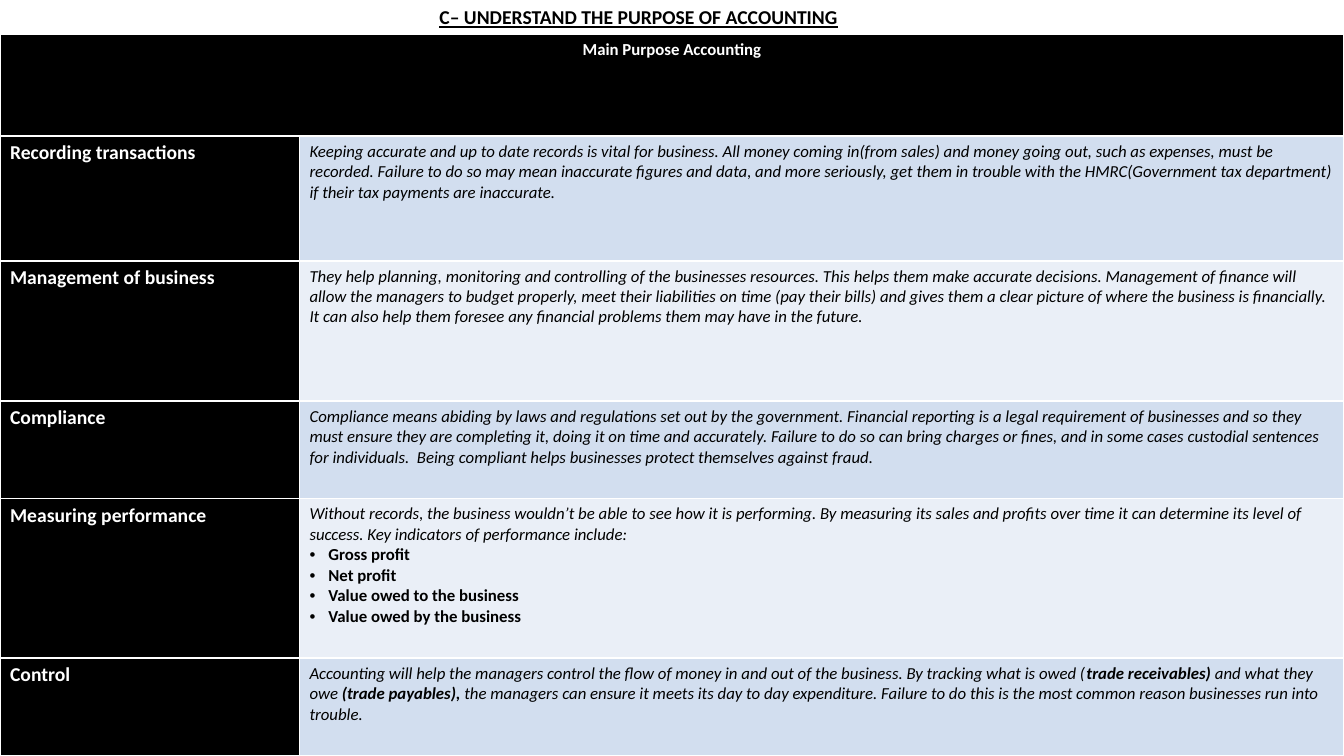
"""Builds a slide that explains the main purposes of accounting in a table."""
from lxml import etree
from pptx import Presentation
from pptx import util as u
from pptx.dml import color
from pptx.enum import text
from pptx.oxml import ns

COLOURS = {"black": "000000", "white": "FFFFFF", "band": "D2DEEF", "pale": "EAEFF7"}
TITLE = "C– UNDERSTAND THE PURPOSE OF ACCOUNTING"
HEADING = "Main Purpose Accounting"
HEADING_HEIGHT = 13.47
COLUMN_WIDTHS = [22.28, 77.72]

PURPOSES = [
    ("Recording transactions", 16.53, [
        "Keeping accurate and up to date records is vital for business. All money coming in"
        "(from sales) and money going out, such as expenses, must be recorded. Failure to do so "
        "may mean inaccurate figures and data, and more seriously, get them in trouble with the "
        "HMRC(Government tax department) if their tax payments are inaccurate."], []),
    ("Management of business", 18.53, [
        "They help planning, monitoring and controlling of the businesses resources. This helps "
        "them make accurate decisions. Management of finance will allow the managers to budget "
        "properly, meet their liabilities on time (pay their bills) and gives them a clear "
        "picture of where the business is financially. It can also help them foresee any "
        "financial problems them may have in the future."], []),
    ("Compliance", 12.93, [
        "Compliance means abiding by laws and regulations set out by the government. Financial "
        "reporting is a legal requirement of businesses and so they must ensure they are "
        "completing it, doing it on time and accurately. Failure to do so can bring charges or "
        "fines, and in some cases custodial sentences for individuals.  Being compliant helps "
        "businesses protect themselves against fraud."], []),
    ("Measuring performance", 21.07, [
        "Without records, the business wouldn’t be able to see how it is performing. By "
        "measuring its sales and profits over time it can determine its level of success. "
        "Key indicators of performance include:"],
     ["Gross profit", "Net profit", "Value owed to the business", "Value owed by the business"]),
    ("Control", 12.93, [
        "Accounting will help the managers control the flow of money in and out of the business. "
        "By tracking what is owed (",
        "trade receivables)",
        " and what they owe ",
        "(trade payables),",
        " the managers can ensure it meets its day to day expenditure. Failure to do this is the "
        "most common reason businesses run into trouble."], []),
]


class Board:
    """Holds the style and the current slide; lengths are percentages of the slide."""

    font = "Calibri"
    label_size = 14
    body_size = 12
    border_width = 1
    bullet_indent = 1.41

    def __init__(self):
        self.deck = Presentation()
        self.deck.slide_width = u.Inches(13.33)
        self.deck.slide_height = u.Inches(7.5)
        self.slide = self.deck.slides.add_slide(self.deck.slide_layouts[5])

    def across(self, share):
        return round(self.deck.slide_width * share / 100)

    def down(self, share):
        return round(self.deck.slide_height * share / 100)

    def run(self, paragraph, words, size, colour, bold=False, italic=False, underline=False):
        run = paragraph.add_run()
        run.text = words
        font = run.font
        font.name, font.size = self.font, u.Pt(size)
        font.bold, font.italic, font.underline = bold, italic, underline
        font.color.rgb = color.RGBColor.from_string(COLOURS[colour])

    def title(self, words, left, top, width, height):
        title = self.slide.shapes.title
        title.left, title.top = self.across(left), self.down(top)
        title.width, title.height = self.across(width), self.down(height)
        frame = title.text_frame
        frame.word_wrap = True
        frame.auto_size = text.MSO_AUTO_SIZE.SHAPE_TO_FIT_TEXT
        frame.vertical_anchor = text.MSO_ANCHOR.TOP
        heading = frame.paragraphs[0]
        heading.alignment = text.PP_ALIGN.CENTER
        self.run(heading, words, self.label_size, "black", bold=True, underline=True)

    def table(self, top, widths, heights):
        frame = self.slide.shapes.add_table(
            len(heights), len(widths), 0, self.down(top),
            self.across(sum(widths)), self.down(sum(heights)))
        table = frame.table
        table.horz_banding = False
        for column, width in zip(table.columns, widths):
            column.width = self.across(width)
        for row, height in zip(table.rows, heights):
            row.height = self.down(height)
        return table

    def cell(self, cell, fill):
        cell.fill.solid()
        cell.fill.fore_color.rgb = color.RGBColor.from_string(COLOURS[fill])
        properties = cell._tc.get_or_add_tcPr()
        for place, side in enumerate(("lnL", "lnR", "lnT", "lnB")):
            line = etree.Element(ns.qn(f"a:{side}"), w=str(u.Pt(self.border_width)))
            paint = etree.SubElement(line, ns.qn("a:solidFill"))
            etree.SubElement(paint, ns.qn("a:srgbClr"), val=COLOURS["white"])
            properties.insert(place, line)
        return cell.text_frame.paragraphs[0]

    def bullet(self, frame, words):
        item = frame.add_paragraph()
        properties = item._p.get_or_add_pPr()
        indent = self.across(self.bullet_indent)
        properties.set("marL", str(indent))
        properties.set("indent", str(-indent))
        etree.SubElement(properties, ns.qn("a:buFont"), typeface="Arial")
        etree.SubElement(properties, ns.qn("a:buChar"), char="•")
        self.run(item, words, self.body_size, "black", bold=True)


def main():
    board = Board()
    title_height = 4.53
    board.title(TITLE, 12.3, 0, 70.44, title_height)

    heights = [HEADING_HEIGHT] + [height for _, height, _, _ in PURPOSES]
    purposes = board.table(title_height, COLUMN_WIDTHS, heights)

    purposes.cell(0, 0).merge(purposes.cell(0, 1))
    heading = board.cell(purposes.cell(0, 0), "black")
    board.cell(purposes.cell(0, 1), "black")
    heading.alignment = text.PP_ALIGN.CENTER
    board.run(heading, HEADING, board.body_size, "white", bold=True)

    for row, (purpose, _, explanation, indicators) in enumerate(PURPOSES, start=1):
        label = board.cell(purposes.cell(row, 0), "black")
        board.run(label, purpose, board.label_size, "white", bold=True)

        detail = purposes.cell(row, 1)
        paragraph = board.cell(detail, "band" if row % 2 else "pale")
        for order, words in enumerate(explanation):
            board.run(paragraph, words, board.body_size, "black",
                      bold=order % 2 == 1, italic=True)
        for indicator in indicators:
            board.bullet(detail.text_frame, indicator)

    board.deck.save("out.pptx")


if __name__ == "__main__":
    main()
